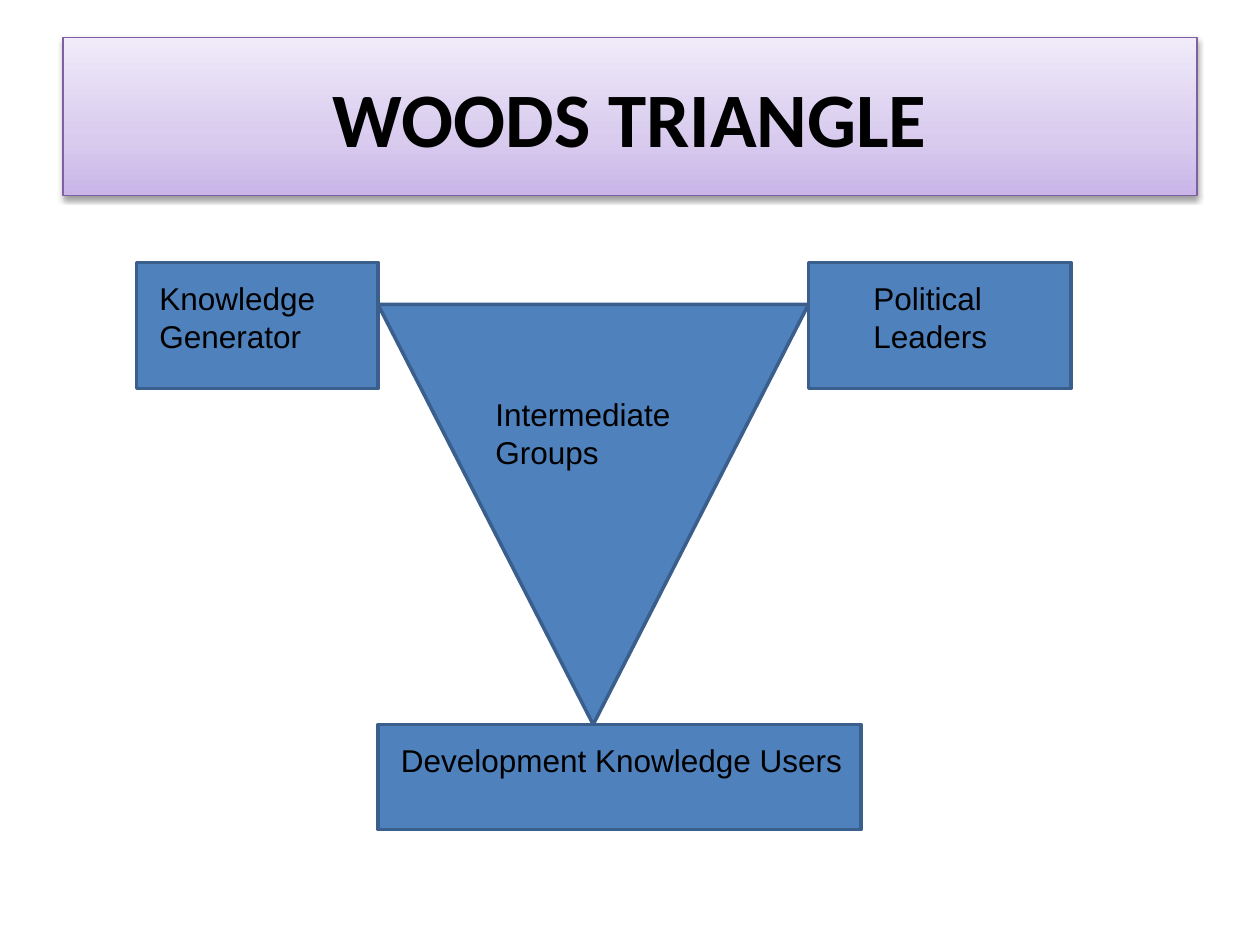
from copy import deepcopy
from typing import NamedTuple

from pptx import Presentation
from pptx import util as u
from pptx.dml.color import RGBColor
from pptx.enum import shapes, text
from pptx.oxml import parse_xml
from pptx.oxml.ns import nsdecls, qn

BLACK = RGBColor(0x00, 0x00, 0x00)
BLUE = RGBColor(0x4F, 0x81, 0xBD)
DARK_BLUE = RGBColor(0x3A, 0x5F, 0x8C)
PURPLE = RGBColor(0x7D, 0x60, 0xA0)
TITLE_STOPS = (
    (0.0, RGBColor(0xC9, 0xB5, 0xE8)),
    (0.35, RGBColor(0xD8, 0xCB, 0xEE)),
    (1.0, RGBColor(0xF0, 0xEA, 0xF9)),
)


class Box(NamedTuple):
    """Left, top, width and height in points."""
    left: float
    top: float
    width: float
    height: float


class Block(NamedTuple):
    kind: shapes.MSO_SHAPE
    box: Box


class Label(NamedTuple):
    wording: str
    box: Box


TITLE = Label("WOODS TRIANGLE", Box(36, 21.6, 648, 90))
BLOCKS = (
    Block(shapes.MSO_SHAPE.FLOWCHART_MERGE, Box(216, 174, 246, 240)),
    Block(shapes.MSO_SHAPE.RECTANGLE, Box(78, 150, 138, 72)),
    Block(shapes.MSO_SHAPE.RECTANGLE, Box(462, 150, 150, 72)),
    Block(shapes.MSO_SHAPE.RECTANGLE, Box(216, 414, 276, 60)),
)
LABELS = (
    Label("Intermediate Groups", Box(276, 222, 126, 51)),
    Label("Knowledge Generator", Box(84, 156, 114, 51)),
    Label("Political Leaders", Box(492, 156, 108, 51)),
    Label("Development Knowledge Users", Box(222, 420, 270, 29)),
)


def in_points(box: Box) -> list:
    return [u.Pt(length) for length in box]


def add_outlined(slide, block: Block, line_color: RGBColor, line_width: float):
    shape = slide.shapes.add_shape(block.kind, *in_points(block.box))
    shape.shadow.inherit = False
    shape.line.color.rgb = line_color
    shape.line.width = u.Pt(line_width)
    return shape


def add_wording(shape, wording: str, font_name: str, size: float,
                bold: bool = False, align=text.PP_ALIGN.LEFT) -> None:
    shape.text_frame.word_wrap = True
    paragraph = shape.text_frame.paragraphs[0]
    paragraph.alignment = align
    run = paragraph.add_run()
    run.text = wording
    run.font.name = font_name
    run.font.size = u.Pt(size)
    run.font.bold = bold
    run.font.color.rgb = BLACK


def add_title(slide, label: Label) -> None:
    block = Block(shapes.MSO_SHAPE.RECTANGLE, label.box)
    shape = add_outlined(slide, block, PURPLE, 0.75)

    # Gradient with three stops, running upwards
    fill = shape.fill
    fill.gradient()
    fill.gradient_angle = 90
    properties = shape._element.spPr
    stop_list = properties.find(".//" + qn("a:gsLst"))
    stop_list.append(deepcopy(stop_list[-1]))
    for stop, (position, color) in zip(fill.gradient_stops, TITLE_STOPS):
        stop.position = position
        stop.color.rgb = color

    # Soft shadow below
    properties.find(qn("a:effectLst")).append(parse_xml(
        f'<a:outerShdw {nsdecls("a")} blurRad="{u.Pt(3.15)}" dist="{u.Pt(1.57)}" '
        'dir="5400000" rotWithShape="0"><a:srgbClr val="000000">'
        '<a:alpha val="38000"/></a:srgbClr></a:outerShdw>'))

    shape.text_frame.vertical_anchor = text.MSO_ANCHOR.MIDDLE
    add_wording(shape, label.wording, "Calibri", 44, True, text.PP_ALIGN.CENTER)


def add_block(slide, block: Block) -> None:
    shape = add_outlined(slide, block, DARK_BLUE, 2)
    shape.fill.solid()
    shape.fill.fore_color.rgb = BLUE


def add_label(slide, label: Label) -> None:
    shape = slide.shapes.add_textbox(*in_points(label.box))
    shape.text_frame.auto_size = text.MSO_AUTO_SIZE.SHAPE_TO_FIT_TEXT
    add_wording(shape, label.wording, "Arial", 18)


def main() -> None:
    presentation = Presentation()
    presentation.slide_width = u.Pt(720)
    presentation.slide_height = u.Pt(540)
    slide = presentation.slides.add_slide(presentation.slide_layouts[6])

    # Title banner
    add_title(slide, TITLE)

    # Triangle and its corner boxes
    for block in BLOCKS:
        add_block(slide, block)

    # Wording over the blocks
    for label in LABELS:
        add_label(slide, label)

    presentation.save("out.pptx")


if __name__ == "__main__":
    main()
